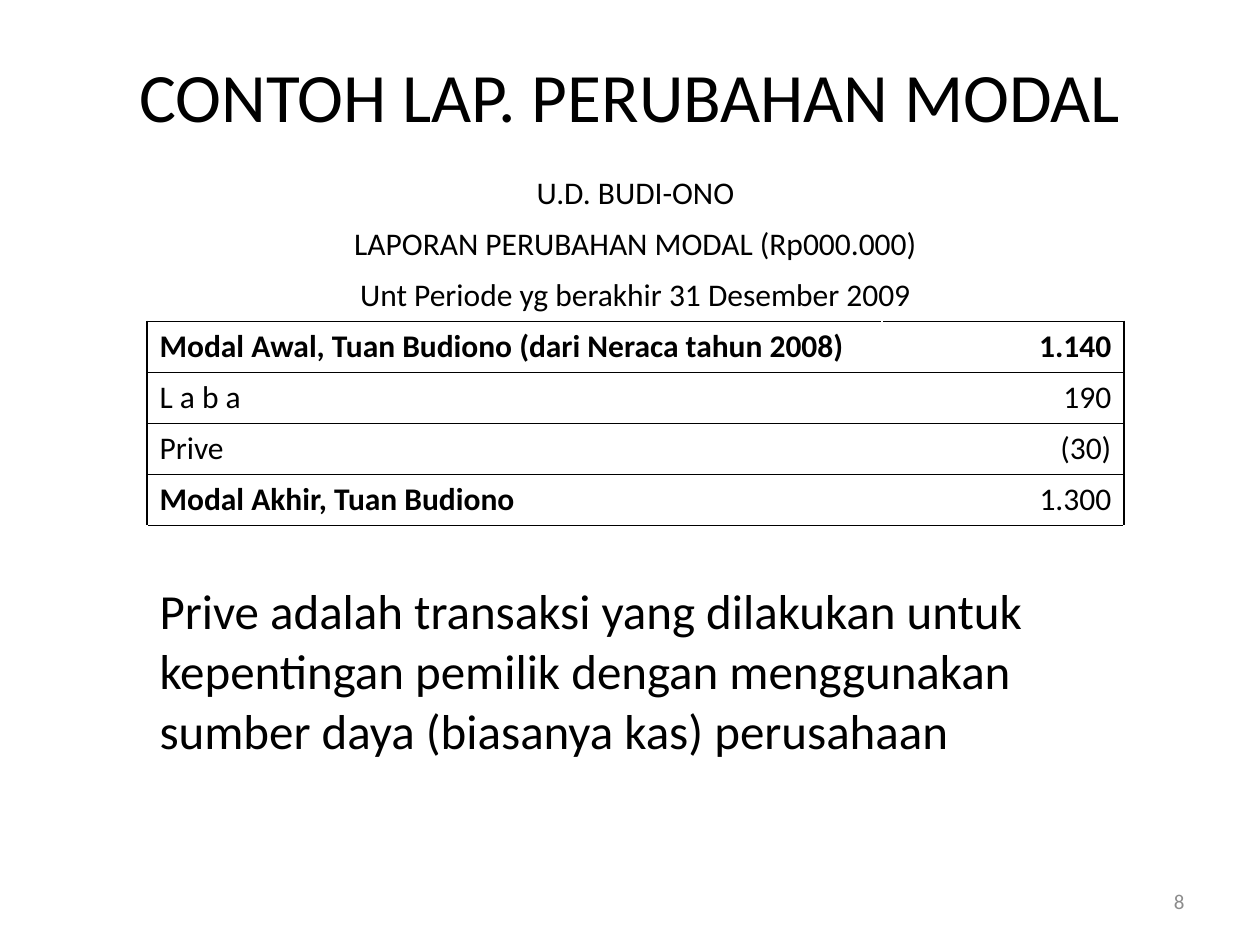
from collections import namedtuple
from dataclasses import dataclass

from lxml.etree import SubElement
from pptx import Presentation
from pptx.dml.color import RGBColor as Rgb
from pptx.enum.text import MSO_ANCHOR as Anchor, PP_ALIGN as Align
from pptx.oxml.ns import qn
from pptx.util import Pt

PX = 914400 // 126
Box = namedtuple("Box", "left top width height")


@dataclass(frozen=True)
class Theme:
    font: str = "Calibri"
    ink: str = "000000"
    paper: str = "FFFFFF"
    muted: str = "8C8C8C"
    title_size: float = 39.6
    entry_size: int = 18
    note_size: int = 28
    number_size: int = 12
    rule_width: int = 1


THEME = Theme()

HEADINGS = [
    "U.D. BUDI-ONO",
    "LAPORAN PERUBAHAN MODAL (Rp000.000)",
    "Unt Periode yg berakhir 31 Desember 2009",
]
ENTRIES = [
    ("Modal Awal, Tuan Budiono (dari Neraca tahun 2008)", "1.140", True, True),
    ("L a b a", "190", False, False),
    ("Prive", "(30)", False, False),
    ("Modal Akhir, Tuan Budiono", "1.300", True, False),
]
NOTE = (
    "Prive adalah transaksi yang dilakukan untuk kepentingan pemilik "
    "dengan menggunakan sumber daya (biasanya kas) perusahaan"
)


def emu(box):
    return [length * PX for length in box]


def write(frame, text, size, align=Align.LEFT, color=THEME.ink, bold=False):
    paragraph = frame.paragraphs[0]
    paragraph.text = text
    paragraph.alignment = align
    formats = {"name": THEME.font, "size": Pt(size), "bold": bold}
    for key, value in formats.items():
        setattr(paragraph.font, key, value)
        for run in paragraph.runs:
            setattr(run.font, key, value)
    for run in paragraph.runs:
        run.font.color.rgb = Rgb.from_string(color)


def draw_rules(cell, sides):
    properties = cell._tc.get_or_add_tcPr()
    for side in sides:
        rule = SubElement(properties, qn(f"a:ln{side}"), w=str(Pt(THEME.rule_width)))
        ink = SubElement(rule, qn("a:solidFill"))
        SubElement(ink, qn("a:srgbClr"), val=THEME.ink)


def fill_cell(cell):
    cell.fill.solid()
    cell.fill.fore_color.rgb = Rgb.from_string(THEME.paper)


def add_title(slide, box):
    title = slide.shapes.title
    for key, value in zip(Box._fields, emu(box)):
        setattr(title, key, value)
    title.text_frame.vertical_anchor = Anchor.MIDDLE
    write(title.text_frame, "CONTOH LAP. PERUBAHAN MODAL", THEME.title_size, Align.CENTER)


def add_statement(slide, box):
    first_entry = len(HEADINGS)
    gap = first_entry + len(ENTRIES)
    note = gap + 1
    row_height = 51
    label_width = 735

    statement = slide.shapes.add_table(note + 1, 2, *emu(box)).table
    for flag in ("first_row", "horz_banding"):
        setattr(statement, flag, False)
    for column, width in zip(statement.columns, (label_width, box.width - label_width)):
        column.width = width * PX
    for row in statement.rows:
        row.height = row_height * PX
    statement.rows[note].height = (box.height - note * row_height) * PX

    for row in [*range(first_entry), note]:
        statement.cell(row, 0).merge(statement.cell(row, 1))
    for row, heading in enumerate(HEADINGS):
        write(statement.cell(row, 0).text_frame, heading, THEME.entry_size, Align.CENTER)
    for row, (label, amount, label_bold, amount_bold) in enumerate(ENTRIES, first_entry):
        write(statement.cell(row, 0).text_frame, label, THEME.entry_size, bold=label_bold)
        write(statement.cell(row, 1).text_frame, amount, THEME.entry_size,
              Align.RIGHT, bold=amount_bold)
    for column in range(2):
        write(statement.cell(gap, column).text_frame, "", THEME.entry_size)
    write(statement.cell(note, 0).text_frame, NOTE, THEME.note_size)

    for row in range(note + 1):
        for column, outer_side in enumerate("LR"):
            cell = statement.cell(row, column)
            if first_entry <= row < gap:
                draw_rules(cell, outer_side + "TB")
            elif row == first_entry - 1:
                draw_rules(cell, "B")
            elif row == gap:
                draw_rules(cell, "T")
            fill_cell(cell)


def add_page_number(slide, box):
    frame = slide.shapes.add_textbox(*emu(box)).text_frame
    frame.word_wrap = True
    frame.vertical_anchor = Anchor.MIDDLE
    write(frame, "8", THEME.number_size, Align.RIGHT, THEME.muted)


def main():
    deck = Presentation()
    deck.slide_width, deck.slide_height = 1260 * PX, 945 * PX
    slide = deck.slides.add_slide(deck.slide_layouts[5])
    add_title(slide, Box(63, 51, 1134, 88))
    add_statement(slide, Box(147, 168, 977, 592))
    add_page_number(slide, Box(903, 876, 294, 50))
    deck.save("out.pptx")


if __name__ == "__main__":
    main()
